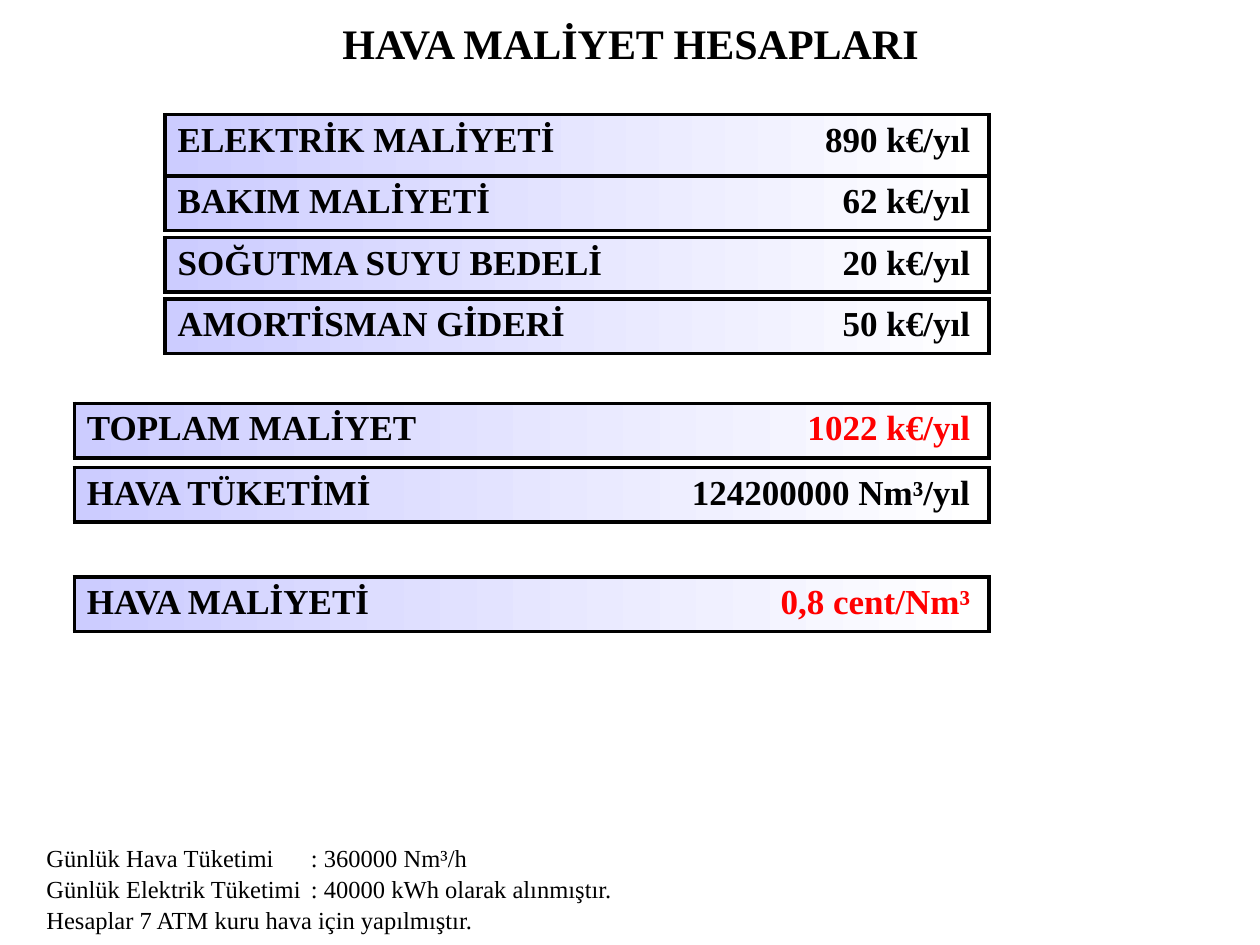
import dataclasses

import pptx
import pptx.dml.color
import pptx.enum.text
import pptx.oxml
import pptx.oxml.ns
import pptx.util

WIDTH = pptx.util.Inches(10)
HEIGHT = pptx.util.Inches(7.5)


@dataclasses.dataclass(frozen=True)
class Theme:
    font: str = "Times New Roman"
    ink: str = "000000"
    result: str = "FF0000"
    bar_start: str = "CCCCFF"
    bar_end: str = "FFFFFF"
    title_size: int = 24
    bar_size: int = 20
    note_size: int = 14
    border: float = 2.25


THEME = Theme()

# Horizontal places in percent of the slide width
BAR_RIGHT = 78.5
COST_LEFT = 13.1
TOTAL_LEFT = 5.9
VALUE_RIGHT = 77.0
CELL_INSET = 1.0

# Vertical places in percent of the slide height
COST_TOP = 12.13
COST_PITCH = 6.5
BAR_HEIGHT = 5.73

COSTS = [
    ("ELEKTRİK MALİYETİ", "890 k€/yıl"),
    ("BAKIM MALİYETİ", "62 k€/yıl"),
    ("SOĞUTMA SUYU BEDELİ", "20 k€/yıl"),
    ("AMORTİSMAN GİDERİ", "50 k€/yıl"),
]
TOTALS = [
    (42.67, "TOPLAM MALİYET", "1022 k€/yıl", THEME.result),
    (49.47, "HAVA TÜKETİMİ", "124200000 Nm³/yıl", THEME.ink),
    (61.07, "HAVA MALİYETİ", "0,8 cent/Nm³", THEME.result),
]
NOTES = [
    "Günlük Hava Tüketimi\t: 360000 Nm³/h",
    "Günlük Elektrik Tüketimi\t: 40000 kWh olarak alınmıştır.",
    "Hesaplar 7 ATM kuru hava için yapılmıştır.",
]


def across(percent):
    return round(WIDTH * percent / 100)


def down(percent):
    return round(HEIGHT * percent / 100)


def add_run(paragraph, text, size, color=THEME.ink, bold=False):
    run = paragraph.add_run()
    run.text = text
    run.font.name = THEME.font
    run.font.size = pptx.util.Pt(size)
    run.font.bold = bold
    run.font.color.rgb = pptx.dml.color.RGBColor.from_string(color)


def add_tab_stop(paragraph, position, alignment):
    """Call after the paragraph spacing is set, as the XML order matters."""
    properties = paragraph._p.get_or_add_pPr()
    properties.append(pptx.oxml.parse_xml(
        f'<a:tabLst {pptx.oxml.ns.nsdecls("a")}>'
        f'<a:tab pos="{position}" algn="{alignment}"/></a:tabLst>'))


def add_text_frame(slide, left, top, width, height, inset_top):
    box = slide.shapes.add_textbox(
        across(left), down(top), across(width), down(height))
    box.text_frame.word_wrap = True
    box.text_frame.margin_top = down(inset_top)
    return box.text_frame


def set_borders(cell):
    properties = cell._tc.get_or_add_tcPr()
    width = pptx.util.Pt(THEME.border)
    for index, side in enumerate("LRTB"):
        properties.insert(index, pptx.oxml.parse_xml(
            f'<a:ln{side} {pptx.oxml.ns.nsdecls("a")} w="{width}">'
            f'<a:solidFill><a:srgbClr val="{THEME.ink}"/></a:solidFill>'
            f'</a:ln{side}>'))


def set_bar_fill(cell):
    cell.fill.gradient()
    cell.fill.gradient_angle = 0
    for stop, color in zip(cell.fill.gradient_stops,
                           (THEME.bar_start, THEME.bar_end)):
        stop.color.rgb = pptx.dml.color.RGBColor.from_string(color)


def add_bar(slide, left, top, label, value, color=THEME.ink,
            height=BAR_HEIGHT):
    """One-cell table with a label at the left and a value at the right."""
    table = slide.shapes.add_table(
        1, 1, across(left), down(top),
        across(BAR_RIGHT - left), down(height)).table
    cell = table.cell(0, 0)
    set_bar_fill(cell)
    set_borders(cell)
    paragraph = cell.text_frame.paragraphs[0]
    add_tab_stop(paragraph, across(VALUE_RIGHT - left - CELL_INSET), "r")
    add_run(paragraph, label + "\t", THEME.bar_size, bold=True)
    add_run(paragraph, value, THEME.bar_size, color, bold=True)


def add_title(slide, text):
    frame = add_text_frame(slide, 14.6, 0.67, 70.9, 6.67, inset_top=1.2)
    paragraph = frame.paragraphs[0]
    paragraph.alignment = pptx.enum.text.PP_ALIGN.CENTER
    add_run(paragraph, text, THEME.title_size, bold=True)


def add_notes_block(slide, lines):
    frame = add_text_frame(slide, 2.7, 89.2, 89, 10, inset_top=0)
    for index, line in enumerate(lines):
        paragraph = frame.add_paragraph() if index else frame.paragraphs[0]
        paragraph.space_before = pptx.util.Pt(1 if index else 0)
        add_tab_stop(paragraph, across(21), "l")
        add_run(paragraph, line, THEME.note_size)


def main():
    presentation = pptx.Presentation()
    presentation.slide_width = WIDTH
    presentation.slide_height = HEIGHT
    slide = presentation.slides.add_slide(presentation.slide_layouts[6])

    add_title(slide, "HAVA MALİYET HESAPLARI")
    for index, (label, value) in enumerate(COSTS):
        # The first bar reaches down to the second one
        height = BAR_HEIGHT if index else COST_PITCH
        add_bar(slide, COST_LEFT, COST_TOP + index * COST_PITCH,
                label, value, height=height)
    for top, label, value, color in TOTALS:
        add_bar(slide, TOTAL_LEFT, top, label, value, color)
    add_notes_block(slide, NOTES)

    presentation.save("out.pptx")


if __name__ == "__main__":
    main()
